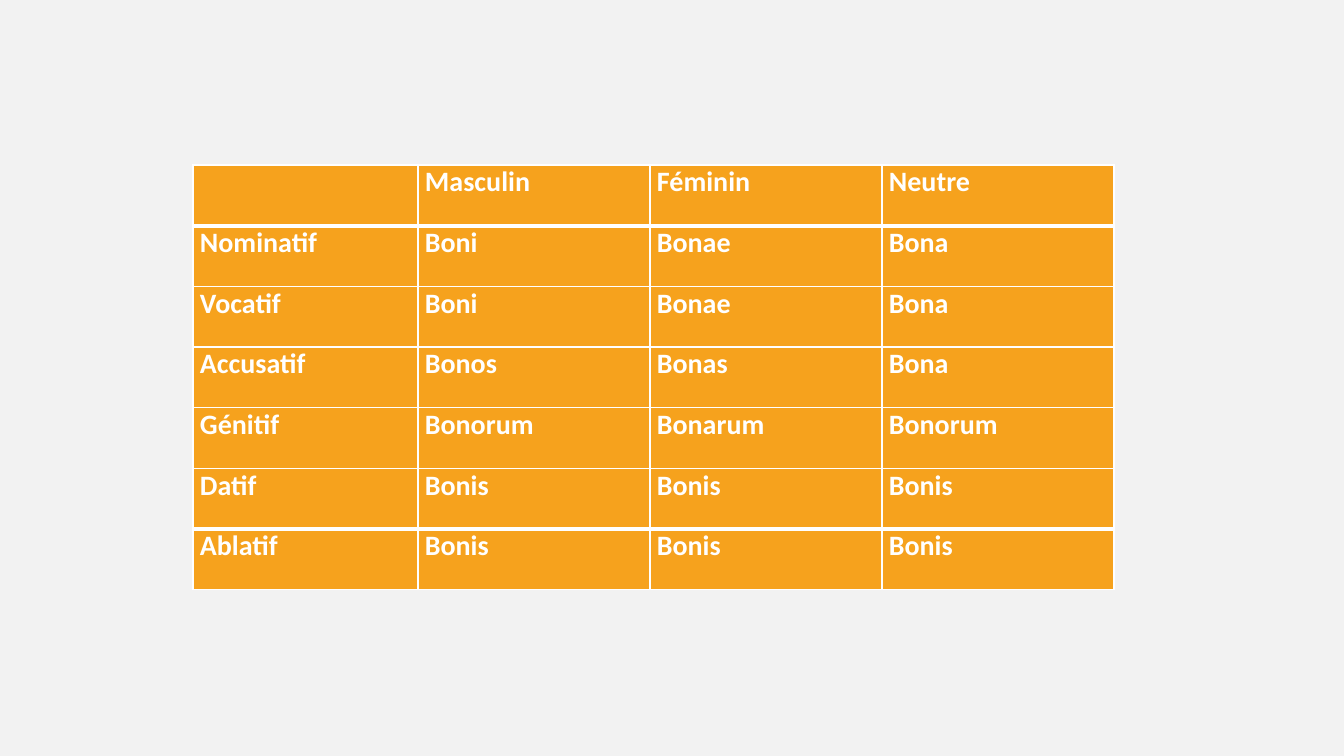
from lxml.etree import SubElement
from pptx import Presentation
from pptx.dml.color import RGBColor
from pptx.oxml.ns import qn
from pptx.util import Pt

EMU_PER_PX = 914400 / 100.8
WHITE, ORANGE, PALE_GREY = "FFFFFF", "F6A21D", "F2F2F2"
DECLENSION = [
    ["", "Masculin", "Féminin", "Neutre"],
    ["Nominatif", "Boni", "Bonae", "Bona"],
    ["Vocatif", "Boni", "Bonae", "Bona"],
    ["Accusatif", "Bonos", "Bonas", "Bona"],
    ["Génitif", "Bonorum", "Bonarum", "Bonorum"],
    ["Datif", "Bonis", "Bonis", "Bonis"],
    ["Ablatif", "Bonis", "Bonis", "Bonis"],
]


def emu(px):
    return round(px * EMU_PER_PX)


def paint(fill, color):
    fill.solid()
    fill.fore_color.rgb = RGBColor.from_string(color)


def write_text(frame, text, font="Calibri", size=20, color=WHITE, bold=False):
    span = frame.paragraphs[0].add_run()
    span.text = text
    span.font.name, span.font.size, span.font.bold = font, Pt(size), bold
    span.font.color.rgb = RGBColor.from_string(color)


class SlideBuilder:
    """Hold the table style and the current slide."""

    fill, line, thin, heavy = ORANGE, WHITE, 1, 3

    def __init__(self, deck, background):
        self.page = deck.slides.add_slide(deck.slide_layouts[6])
        paint(self.page.background.fill, background)

    def border(self, cell, side, width):
        props = cell._tc.get_or_add_tcPr()
        edge = SubElement(props, qn(f"a:ln{side}"), w=str(Pt(width)))
        solid = SubElement(edge, qn("a:solidFill"))
        SubElement(solid, qn("a:srgbClr"), val=self.line)

    def cell(self, cell, text, top, bottom):
        cell.margin_left = cell.margin_right = emu(7)
        cell.margin_top = cell.margin_bottom = 0
        for side, width in zip("LRTB", (self.thin, self.thin, top, bottom)):
            self.border(cell, side, width)
        paint(cell.fill, self.fill)
        if text:
            write_text(cell.text_frame, text, bold=True)

    def table(self, rows, left, top, widths, height):
        frame = self.page.shapes.add_table(
            len(rows), len(widths), emu(left), emu(top), emu(sum(widths)), emu(height))
        grid = frame.table
        for column, width in zip(grid.columns, widths):
            column.width = emu(width)
        last = len(rows) - 1
        heavy_edges = {1, last}
        for r, words in enumerate(rows):
            grid.rows[r].height = emu(height / len(rows))
            above, below = (self.heavy if edge in heavy_edges else self.thin
                            for edge in (r, r + 1))
            for c, word in enumerate(words):
                self.cell(grid.cell(r, c), word, above, below)


def main():
    deck = Presentation()
    deck.slide_width, deck.slide_height = emu(1344), emu(756)
    builder = SlideBuilder(deck, PALE_GREY)
    builder.table(DECLENSION, 193, 165, [225, 232, 232, 232], 425)
    deck.save("out.pptx")


if __name__ == "__main__":
    main()
